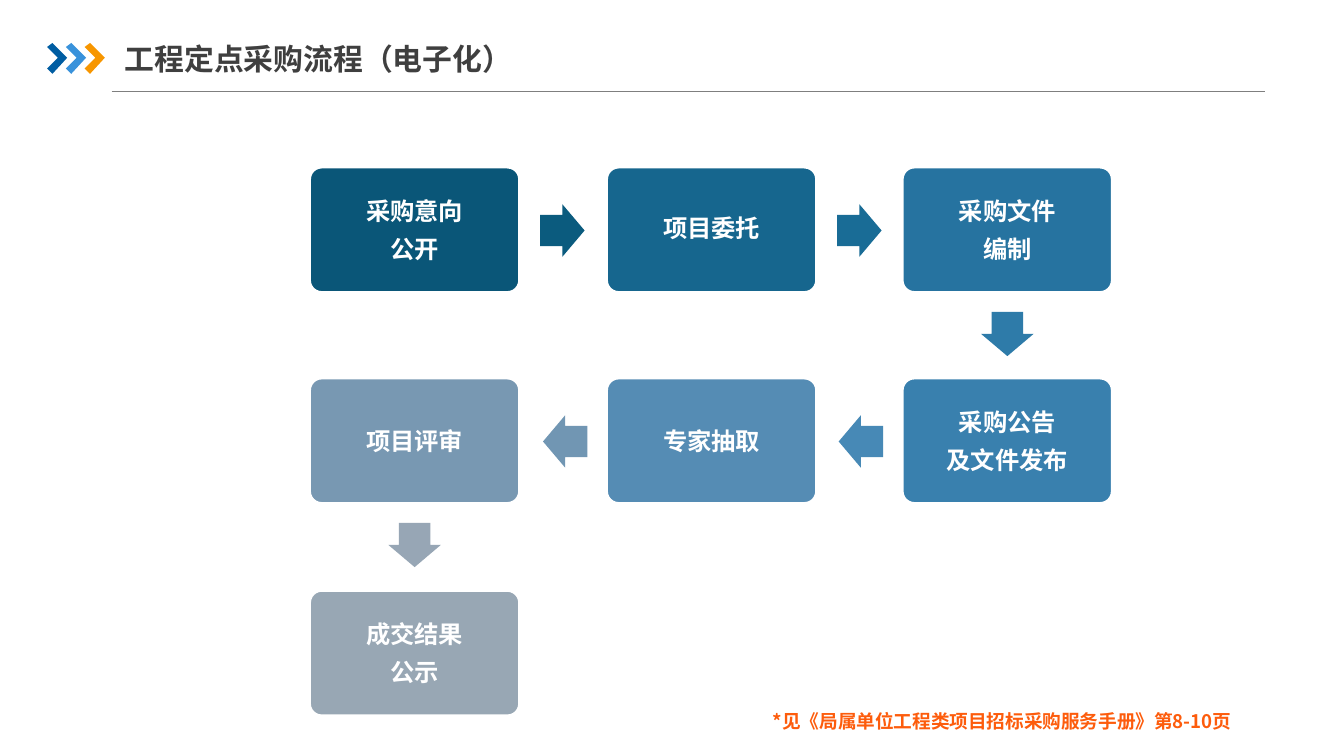
from lxml.etree import SubElement
from pptx import Presentation
from pptx.dml.color import RGBColor
from pptx.enum.shapes import MSO_CONNECTOR, MSO_SHAPE
from pptx.enum.text import MSO_ANCHOR, PP_ALIGN
from pptx.oxml.ns import qn
from pptx.util import Inches, Pt

FONT = "Noto Sans CJK SC"
COLORS = {
    "white": "FFFFFF",
    "title": "3F3F3F",
    "note": "FD5C0C",
    "rule": "7F7F7F",
    "chevron_1": "005DA2",
    "chevron_2": "3992DB",
    "chevron_3": "F79600",
}


def format_text(tf, size, color, align, margins, anchor):
    """Set the frame's layout and one bold font, Latin and East Asian, on all runs."""
    tf.word_wrap = True
    tf.vertical_anchor = anchor
    tf.margin_left = tf.margin_right = Inches(margins[0])
    tf.margin_top = tf.margin_bottom = Inches(margins[1])
    for p in tf.paragraphs:
        p.alignment = align
        for r in p.runs:
            r.font.size = Pt(size)
            r.font.bold = True
            r.font.name = FONT
            r.font.color.rgb = RGBColor.from_string(color)
            SubElement(r.font._element, qn("a:ea"), typeface=FONT)


def paint(sp, color):
    sp.shadow.inherit = False
    sp.fill.solid()
    sp.fill.fore_color.rgb = RGBColor.from_string(color)
    sp.line.fill.background()


prs = Presentation()
prs.slide_width = Inches(10)
prs.slide_height = Inches(10 * 9 / 16)
s = prs.slides.add_slide(prs.slide_layouts[5])

# Header
title = s.shapes.title
title.left, title.top = Inches(0.83), Inches(0.2)
title.width, title.height = Inches(8.3), Inches(0.42)
title.text_frame.text = "工程定点采购流程（电子化）"
title.text_frame.paragraphs[0].line_spacing = 1.2
format_text(title.text_frame, 16, COLORS["title"], PP_ALIGN.JUSTIFY,
            (0.1, 0.05), MSO_ANCHOR.TOP)

rule = s.shapes.add_connector(MSO_CONNECTOR.STRAIGHT, Inches(0.83), Inches(0.68),
                              Inches(9.41), Inches(0.68))
rule.line.color.rgb = RGBColor.from_string(COLORS["rule"])
rule.line.width = Pt(0.75)
SubElement(rule._element.spPr, qn("a:effectLst"))

# Chevron outline in hundredths of an inch
CHEVRON = [(0, 35), (4, 32), (15, 43), (4, 55), (0, 51), (8, 43)]
for i in range(3):
    points = [(35 + 14 * i + x, y) for x, y in CHEVRON]
    builder = s.shapes.build_freeform(*points[0], scale=Inches(0.01))
    builder.add_line_segments(points[1:], close=True)
    paint(builder.convert_to_shape(), COLORS[f"chevron_{i + 1}"])

# Process steps: column, row, text, box colour, direction and colour of next arrow
COLUMNS = (2.3, 4.51, 6.71)
ROWS = (1.24, 2.81, 4.39)
BOX_W, BOX_H = 1.57, 0.94
ARROW_W, ARROW_H = 0.33, 0.39
STEPS = [
    (0, 0, "采购意向\n公开", "0A5678", "right", "0B5B7E"),
    (1, 0, "项目委托", "16668E", "right", "196C96"),
    (2, 0, "采购文件\n编制", "2673A0", "down", "2E7BA9"),
    (2, 1, "采购公告\n及文件发布", "3980AE", "left", "4789B6"),
    (1, 1, "专家抽取", "558CB4", "left", "7196B3"),
    (0, 1, "项目评审", "7898B2", "down", "97A6B5"),
    (0, 2, "成交结果\n公示", "98A7B4", None, None),
]
# Rotation and offset from the box's corner
ARROWS = {"right": (0, 1.72, 0.28), "left": (180, -0.47, 0.28), "down": (90, 0.62, 1.05)}

for col, row, text, color, direction, arrow_color in STEPS:
    x, y = COLUMNS[col], ROWS[row]
    box = s.shapes.add_shape(MSO_SHAPE.ROUNDED_RECTANGLE, Inches(x), Inches(y),
                             Inches(BOX_W), Inches(BOX_H))
    box.adjustments[0] = 0.1
    paint(box, color)
    box.line.color.rgb = RGBColor.from_string(COLORS["white"])
    box.line.width = Pt(2)
    box.text_frame.text = text
    for p in box.text_frame.paragraphs:
        p.space_after = Pt(4.55)
    format_text(box.text_frame, 13, COLORS["white"], PP_ALIGN.CENTER,
                (0.05, 0.05), MSO_ANCHOR.MIDDLE)
    if text == "项目委托":
        box.text_frame.paragraphs[0].line_spacing = 0.9

    if direction:
        rotation, dx, dy = ARROWS[direction]
        arrow = s.shapes.add_shape(MSO_SHAPE.RIGHT_ARROW, Inches(x + dx), Inches(y + dy),
                                   Inches(ARROW_W), Inches(ARROW_H))
        arrow.adjustments[0] = 0.6
        arrow.adjustments[1] = 0.5
        arrow.rotation = rotation
        paint(arrow, arrow_color)

# Footnote
note = s.shapes.add_textbox(Inches(5.69), Inches(5.17), Inches(3.72), Inches(0.31))
note.text_frame.text = "*见《局属单位工程类项目招标采购服务手册》第8-10页"
note.text_frame.paragraphs[0].line_spacing = 1.5
format_text(note.text_frame, 10, COLORS["note"], PP_ALIGN.LEFT,
            (0.06, 0.03), MSO_ANCHOR.TOP)

prs.save("out.pptx")
